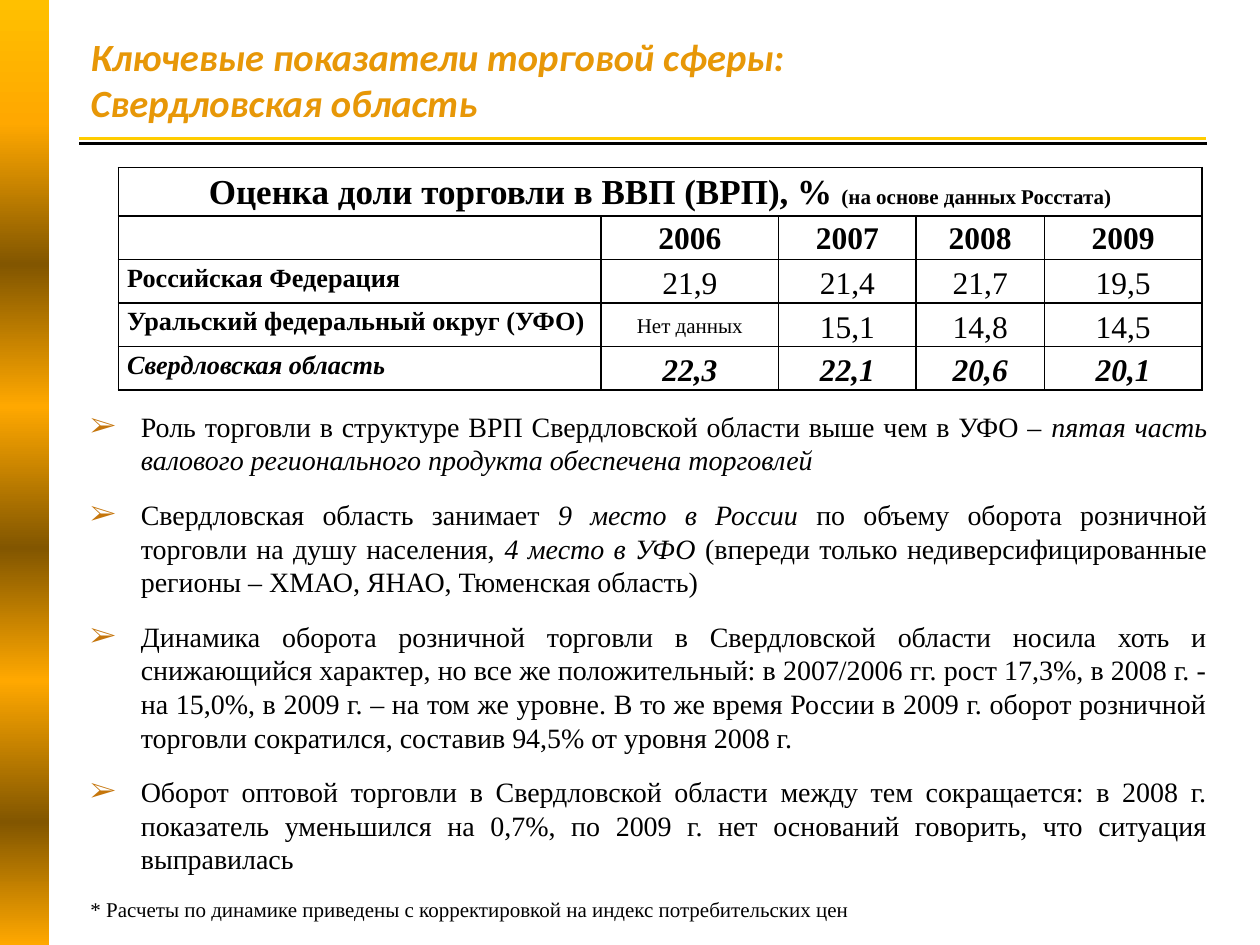
import pptx
import pptx.util
import pptx.dml.color
import pptx.enum.shapes
import pptx.enum.text
import pptx.oxml.ns
from lxml import etree

Inches, Pt = pptx.util.Inches, pptx.util.Pt
RGBColor = pptx.dml.color.RGBColor
ALIGN, ANCHOR = pptx.enum.text.PP_ALIGN, pptx.enum.text.MSO_ANCHOR
qn = pptx.oxml.ns.qn

BLACK = RGBColor(0x00, 0x00, 0x00)
YELLOW = RGBColor(0xFF, 0xCC, 0x00)
TITLE_COLOR = RGBColor(0xE7, 0x97, 0x07)
BULLET_COLOR = RGBColor(0xC5, 0x75, 0x0B)
GOLD = RGBColor(0xFF, 0xC0, 0x00)
ORANGE = RGBColor(0xFF, 0xA8, 0x00)
BROWN = RGBColor(0x82, 0x56, 0x00)
SERIF = "Times New Roman"

TITLE = "Ключевые показатели торговой сферы:\vСвердловская область"
STOPS = [(0, GOLD), (13, ORANGE), (28, BROWN), (43, ORANGE),
         (58, BROWN), (72, ORANGE), (87, BROWN), (100, ORANGE)]
RULES = [(1.14, 9.58, BLACK), (1.1, 9.57, YELLOW)]

HEADING = [("Оценка доли торговли в ВВП (ВРП), % ", {}),
           ("(на основе данных Росстата)", {"size": 12})]
ROWS = [
    ("", "2006", "2007", "2008", "2009"),
    ("Российская Федерация", "21,9", "21,4", "21,7", "19,5"),
    ("Уральский федеральный округ (УФО)", "Нет данных", "15,1", "14,8", "14,5"),
    ("Свердловская область", "22,3", "22,1", "20,6", "20,1"),
]
COL_WIDTHS = [3.83, 1.41, 1.09, 1.02, 1.25]
HEADING_HEIGHT, ROW_HEIGHT = 0.35, 0.32

IT = {"italic": True}
BULLETS = [
    [("Роль торговли в структуре ВРП Свердловской области выше чем в УФО – ", {}),
     ("пятая часть валового регионального продукта обеспечена торговлей", IT)],
    [("Свердловская область занимает ", {}),
     ("9 место в России ", IT),
     ("по объему оборота розничной торговли на душу населения, ", {}),
     ("4 место в УФО ", IT),
     ("(впереди только недиверсифицированные регионы – ХМАО, ЯНАО, Тюменская область)", {})],
    [("Динамика оборота розничной торговли в Свердловской области носила хоть и "
      "снижающийся характер, но все же положительный: в 2007/2006 гг. рост 17,3%, "
      "в 2008 г. - на 15,0%, в 2009 г. – на том же уровне. В то же время России в "
      "2009 г. оборот розничной торговли сократился, составив 94,5% от уровня 2008 г.", {})],
    [("Оборот оптовой торговли в Свердловской области между тем сокращается: в 2008 г. "
      "показатель уменьшился на 0,7%, по 2009 г. нет оснований говорить, что ситуация "
      "выправилась", {})],
]
FOOTNOTE = [("* Расчеты по динамике приведены с корректировкой на индекс потребительских цен",
             {"size": 12})]


def add(parent, tag, **attrs):
    return etree.SubElement(parent, qn(tag), {k: str(v) for k, v in attrs.items()})


def write(p, runs, size=16, font=SERIF, color=BLACK, bold=False, italic=False,
          align=ALIGN.LEFT, spacing=None, before=None, after=None):
    p.alignment = align
    p.line_spacing = spacing
    p.space_before = before
    p.space_after = after
    base = {"size": size, "bold": bold, "italic": italic}
    for text, extra in runs:
        fmt = {**base, **extra}
        for i, line in enumerate(text.split("\v")):
            if i:
                p.add_line_break()
            r = p.add_run()
            r.text = line
            f = r.font
            f.size, f.name = Pt(fmt["size"]), font
            f.bold, f.italic = fmt["bold"], fmt["italic"]
            f.color.rgb = color
    if not any(text for text, _ in runs):
        p.font.size = Pt(size)


def add_box(s, x, y, w, h, anchor=ANCHOR.TOP):
    tf = s.shapes.add_textbox(Inches(x), Inches(y), Inches(w), Inches(h)).text_frame
    tf.word_wrap = True
    tf.vertical_anchor = anchor
    return tf


def add_side_band(s):
    sp = s.shapes.add_shape(pptx.enum.shapes.MSO_SHAPE.RECTANGLE,
                            0, 0, Inches(0.39), Inches(7.5))
    sp.shadow.inherit = False
    sp.line.fill.background()
    sp.fill.gradient()
    grad = sp._element.spPr.find(qn("a:gradFill"))
    for child in list(grad):
        grad.remove(child)
    stops = add(grad, "a:gsLst")
    for pos, color in STOPS:
        add(add(stops, "a:gs", pos=pos * 1000), "a:srgbClr", val=color)
    add(grad, "a:lin", ang=5400000, scaled=0)


def add_rule(s, y, right, color):
    c = s.shapes.add_connector(pptx.enum.shapes.MSO_CONNECTOR.STRAIGHT,
                               Inches(0.63), Inches(y), Inches(right), Inches(y))
    c.line.color.rgb = color
    c.line.width = Pt(1.75)
    add(c._element.spPr, "a:effectLst")


def add_title(s):
    p = add_box(s, 0.62, 0.16, 6.72, 0.94, ANCHOR.MIDDLE).paragraphs[0]
    write(p, [(TITLE, {})], size=22, font="Calibri", color=TITLE_COLOR, bold=True, italic=True)
    for r in p.runs:
        effects = etree.Element(qn("a:effectLst"))
        shadow = add(effects, "a:outerShdw", blurRad=38100, dist=38100, dir=2700000, algn="tl")
        add(add(shadow, "a:srgbClr", val=BLACK), "a:alpha", val=30000)
        r.font._element.find(qn("a:solidFill")).addnext(effects)


def style_cell(cell):
    cell.margin_left = cell.margin_right = Inches(0.07)
    cell.margin_top = cell.margin_bottom = 0
    tcPr = cell._tc.get_or_add_tcPr()
    for side in ("L", "R", "T", "B"):
        ln = add(tcPr, "a:ln" + side, w=12700)
        add(add(ln, "a:solidFill"), "a:srgbClr", val=BLACK)
    cell.fill.background()


def add_share_table(s):
    table = s.shapes.add_table(len(ROWS) + 1, len(COL_WIDTHS), Inches(0.94), Inches(1.33),
                               Inches(sum(COL_WIDTHS)),
                               Inches(HEADING_HEIGHT + ROW_HEIGHT * len(ROWS))).table
    table.first_row = table.horz_banding = False
    for col, width in zip(table.columns, COL_WIDTHS):
        col.width = Inches(width)
    for i, row in enumerate(table.rows):
        row.height = Inches(ROW_HEIGHT if i else HEADING_HEIGHT)
    for cell in table.iter_cells():
        style_cell(cell)
    table.cell(0, 0).merge(table.cell(0, len(COL_WIDTHS) - 1))
    write(table.cell(0, 0).text_frame.paragraphs[0], HEADING, size=20, bold=True,
          align=ALIGN.CENTER, spacing=1.15)
    for i, row in enumerate(ROWS, 1):
        last = i == len(ROWS)
        for j, text in enumerate(row):
            cell = table.cell(i, j)
            if i > 1 and j:
                cell.vertical_anchor = ANCHOR.MIDDLE
            size = 15 if j == 0 else 12 if text == "Нет данных" else 18
            write(cell.text_frame.paragraphs[0], [(text, {})], size=size,
                  bold=i == 1 or j == 0 or last, italic=last,
                  align=ALIGN.CENTER if j else ALIGN.LEFT, spacing=1.15)


def add_findings(s):
    tf = add_box(s, 0.62, 3.2, 9.06, 4.21)
    for i, runs in enumerate(BULLETS + [FOOTNOTE]):
        p = tf.paragraphs[0] if i == 0 else tf.add_paragraph()
        pPr = p._p.get_or_add_pPr()
        pPr.set("marL", str(Inches(0.4)))
        pPr.set("indent", str(-Inches(0.4)))
        if runs is not FOOTNOTE:
            add(add(pPr, "a:buClr"), "a:srgbClr", val=BULLET_COLOR)
            add(pPr, "a:buFont", typeface=SERIF)
            add(pPr, "a:buChar", char="➢")
        write(p, runs, align=ALIGN.JUSTIFY, before=Pt(6) if i else None, after=Pt(6))


def main():
    prs = pptx.Presentation()
    prs.slide_width, prs.slide_height = Inches(10), Inches(7.5)
    s = prs.slides.add_slide(prs.slide_layouts[6])
    for rule in RULES:
        add_rule(s, *rule)
    add_side_band(s)
    add_title(s)
    add_share_table(s)
    add_findings(s)
    prs.save("out.pptx")


if __name__ == "__main__":
    main()
